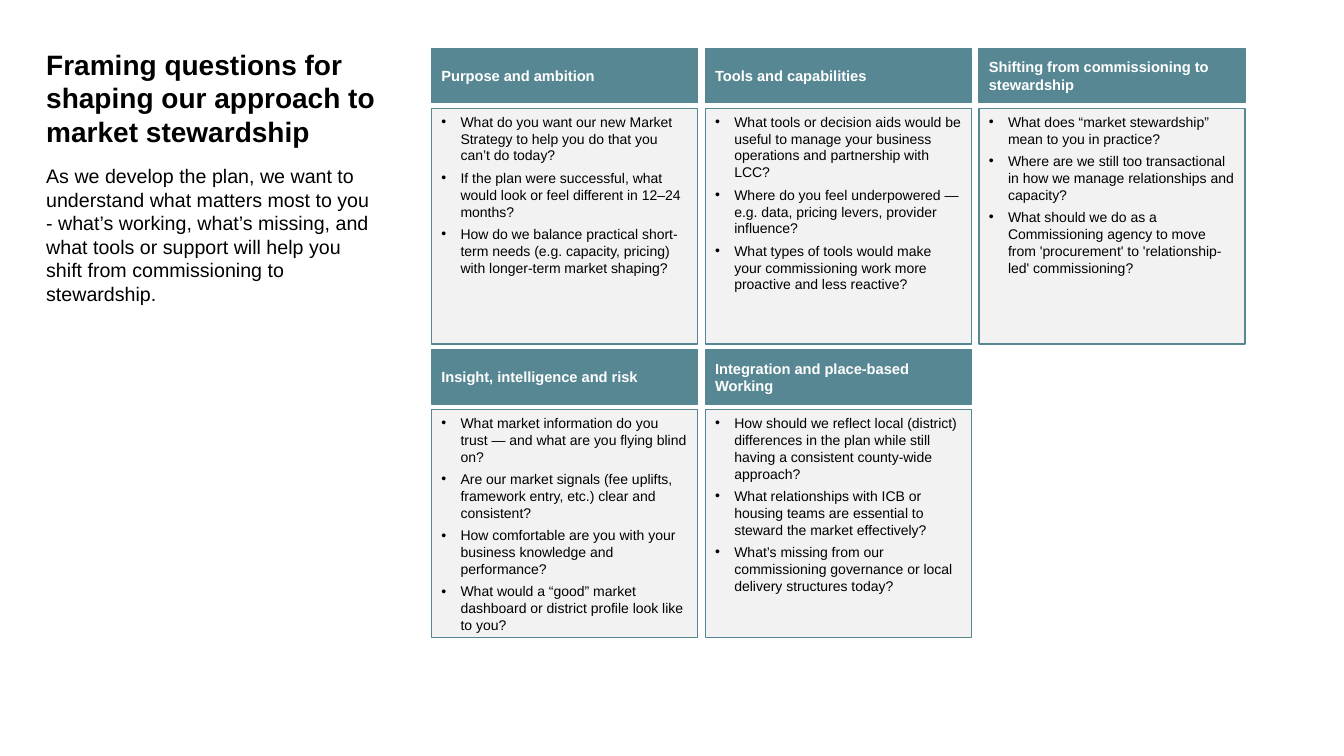
from dataclasses import dataclass

from lxml import etree
from pptx import Presentation
from pptx.dml.color import RGBColor
from pptx.enum.shapes import MSO_SHAPE
from pptx.enum.text import MSO_ANCHOR, MSO_AUTO_SIZE, PP_ALIGN
from pptx.oxml.ns import qn
from pptx.util import Inches, Pt

RECTANGLE = MSO_SHAPE.RECTANGLE
TOP, MIDDLE = MSO_ANCHOR.TOP, MSO_ANCHOR.MIDDLE
LEFT = PP_ALIGN.LEFT
GROW = MSO_AUTO_SIZE.SHAPE_TO_FIT_TEXT


@dataclass(frozen=True)
class Theme:
    """Colours, font and type sizes of the slide."""
    teal: RGBColor = RGBColor(0x57, 0x87, 0x93)
    panel: RGBColor = RGBColor(0xF2, 0xF2, 0xF2)
    ink: RGBColor = RGBColor(0, 0, 0)
    paper: RGBColor = RGBColor(0xFF, 0xFF, 0xFF)
    font: str = "Arial"
    title: float = 20
    intro: float = 14
    heading: float = 10.5
    question: float = 10


THEME = Theme()
SLIDE_WIDTH, SLIDE_HEIGHT = 13.33, 7.5
MARGIN = 0.36
GRID_LEFT, GRID_TOP = 4.28, 0.48
CARD_WIDTH, COLUMN_STEP = 2.64, 2.715
HEADING_HEIGHT, ROW_GAP = 0.54, 0.055
PANEL_HEIGHTS = (2.34, 2.26)
COLUMNS = 3
BULLET_INDENT = 0.19

TITLE = "Framing questions for shaping our approach to market stewardship"
INTRO = (
    "As we develop the plan, we want to understand what matters most to you "
    "- what’s working, what’s missing, and what tools or support will help you "
    "shift from commissioning to stewardship."
)
THEMES_OF_QUESTIONS = (
    ("Purpose and ambition", (
        "What do you want our new Market Strategy to help you do that you can’t do today?",
        "If the plan were successful, what would look or feel different in 12–24 months?",
        "How do we balance practical short-term needs (e.g. capacity, pricing) "
        "with longer-term market shaping?",
    )),
    ("Tools and capabilities", (
        "What tools or decision aids would be useful to manage your business "
        "operations and partnership with LCC?",
        "Where do you feel underpowered — e.g. data, pricing levers, provider influence?",
        "What types of tools would make your commissioning work more proactive "
        "and less reactive?",
    )),
    ("Shifting from commissioning to stewardship", (
        "What does “market stewardship” mean to you in practice?",
        "Where are we still too transactional in how we manage relationships and capacity?",
        "What should we do as a Commissioning agency to move from 'procurement' "
        "to 'relationship-led' commissioning?",
    )),
    ("Insight, intelligence and risk", (
        "What market information do you trust — and what are you flying blind on?",
        "Are our market signals (fee uplifts, framework entry, etc.) clear and consistent?",
        "How comfortable are you with your business knowledge and performance?",
        "What would a “good” market dashboard or district profile look like to you?",
    )),
    ("Integration and place-based Working", (
        "How should we reflect local (district) differences in the plan while "
        "still having a consistent county-wide approach?",
        "What relationships with ICB or housing teams are essential to steward "
        "the market effectively?",
        "What’s missing from our commissioning governance or local delivery "
        "structures today?",
    )),
)


def add_span(para, text, size, color, bold=False):
    """Add one styled run to a paragraph."""
    para.alignment = LEFT
    span = para.add_run()
    span.text = text
    span.font.name = THEME.font
    span.font.size = Pt(size)
    span.font.bold = bold
    span.font.color.rgb = color


def add_bullet(para):
    """Give a paragraph a hanging round bullet."""
    properties = para._p.get_or_add_pPr()
    properties.set("marL", str(Inches(BULLET_INDENT)))
    properties.set("indent", str(-Inches(BULLET_INDENT)))
    bullet_font = etree.SubElement(properties, qn("a:buFont"))
    bullet_font.set("typeface", THEME.font)
    etree.SubElement(properties, qn("a:buChar")).set("char", "•")


def add_box(page, left, top, height, fill, anchor):
    """Add a teal-edged card rectangle and return its text frame."""
    box = page.shapes.add_shape(
        RECTANGLE, Inches(left), Inches(top), Inches(CARD_WIDTH), Inches(height))
    box.shadow.inherit = False
    box.fill.solid()
    box.fill.fore_color.rgb = fill
    box.line.color.rgb = THEME.teal
    box.line.width = Pt(1)
    box.text_frame.word_wrap = True
    box.text_frame.vertical_anchor = anchor
    return box.text_frame


def add_card(page, column, row, heading, questions):
    """Add a heading bar with its panel of questions at a grid cell."""
    left = GRID_LEFT + column * COLUMN_STEP
    top = GRID_TOP + sum(PANEL_HEIGHTS[:row]) + row * (HEADING_HEIGHT + 2 * ROW_GAP)
    bar = add_box(page, left, top, HEADING_HEIGHT, THEME.teal, MIDDLE)
    add_span(bar.paragraphs[0], heading, THEME.heading, THEME.paper, bold=True)

    panel_top = top + HEADING_HEIGHT + ROW_GAP
    panel = add_box(page, left, panel_top, PANEL_HEIGHTS[row], THEME.panel, TOP)
    for index, question in enumerate(questions):
        para = panel.add_paragraph() if index else panel.paragraphs[0]
        add_bullet(para)
        para.space_after = Pt(4)
        add_span(para, question, THEME.question, THEME.ink)


def add_text(page, top, width, height, text, size, bold=False):
    """Add a growing text box at the left margin."""
    box = page.shapes.add_textbox(
        Inches(MARGIN), Inches(top), Inches(width), Inches(height))
    box.text_frame.word_wrap = True
    box.text_frame.auto_size = GROW
    add_span(box.text_frame.paragraphs[0], text, size, THEME.ink, bold)


def main():
    """Build the slide and save the deck."""
    deck = Presentation()
    deck.slide_width = Inches(SLIDE_WIDTH)
    deck.slide_height = Inches(SLIDE_HEIGHT)
    page = deck.slides.add_slide(deck.slide_layouts[6])
    for index, (heading, questions) in enumerate(THEMES_OF_QUESTIONS):
        row, column = divmod(index, COLUMNS)
        add_card(page, column, row, heading, questions)
    add_text(page, 0.42, 3.75, 1.11, TITLE, THEME.title, bold=True)
    add_text(page, 1.58, 3.5, 1.51, INTRO, THEME.intro)
    deck.save("out.pptx")


if __name__ == "__main__":
    main()
